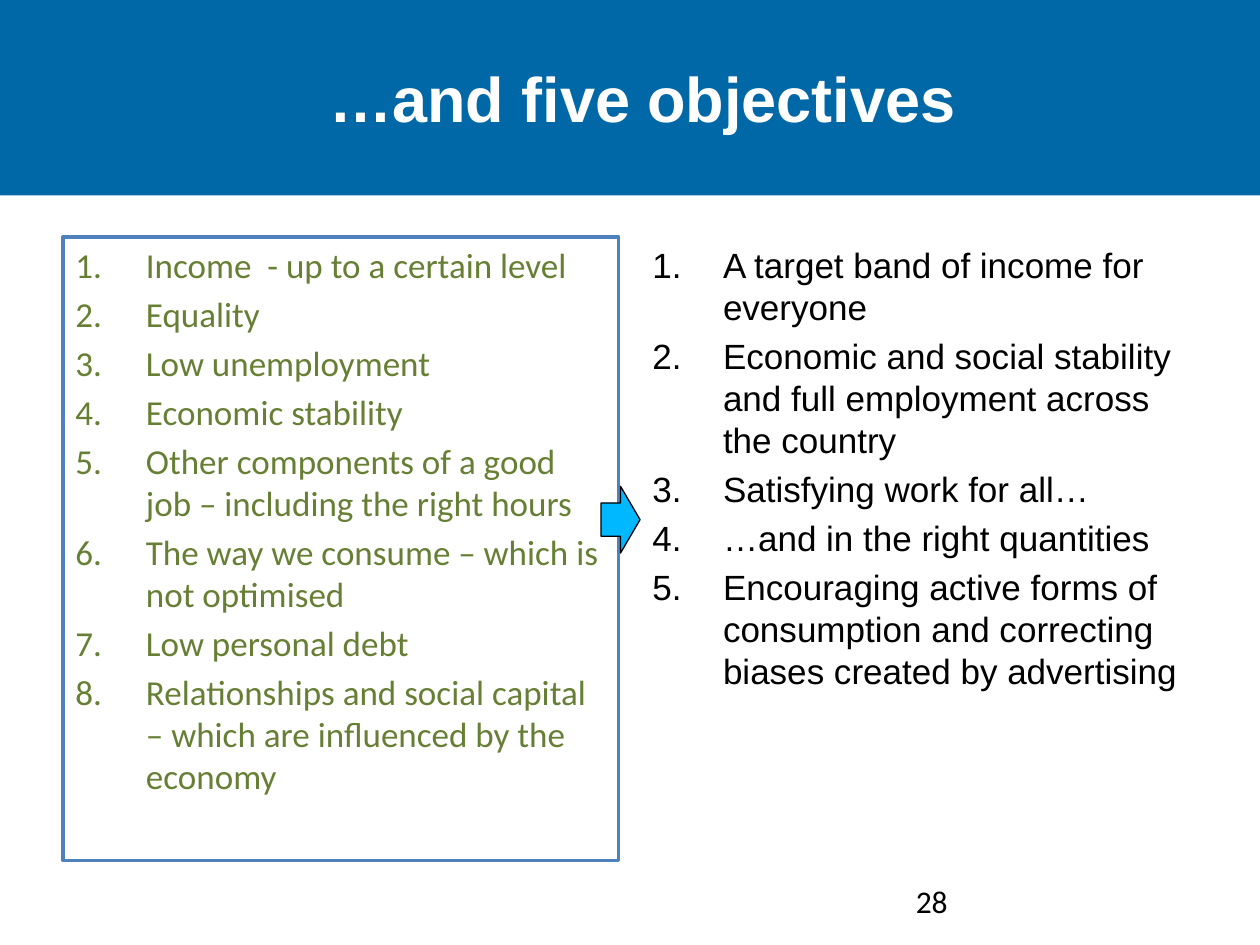
from lxml.etree import SubElement
from pptx import Presentation
from pptx.dml.color import RGBColor
from pptx.enum.shapes import MSO_SHAPE
from pptx.enum.text import MSO_ANCHOR, PP_ALIGN
from pptx.oxml.ns import qn
from pptx.util import Emu, Pt

EMU_PER_PX = 9144
COLORS = {
    "band": "0068A6",
    "white": "FFFFFF",
    "black": "000000",
    "frame": "4F81BD",
    "factor": "677F34",
    "arrow": "00B8FF",
}
FACTORS = [
    "Income  - up to a certain level",
    "Equality",
    "Low unemployment",
    "Economic stability",
    "Other components of a good job – including the right hours",
    "The way we consume – which is not optimised",
    "Low personal debt",
    "Relationships and social capital – which are influenced by the economy",
]
OBJECTIVES = [
    "A target band of income for everyone",
    "Economic and social stability and full employment across the country",
    "Satisfying work for all…",
    "…and in the right quantities",
    "Encouraging active forms of consumption and correcting biases created by advertising",
]


def px(length):
    return Emu(length * EMU_PER_PX)


def color(name):
    return RGBColor.from_string(COLORS[name])


def add_run(paragraph, text, size, font, ink, bold=False):
    run = paragraph.add_run()
    run.text = text
    run.font.size = Pt(size)
    run.font.name = font
    run.font.bold = bold
    run.font.color.rgb = color(ink)


def paint(shape, fill, line, width):
    shape.fill.solid()
    shape.fill.fore_color.rgb = color(fill)
    shape.line.color.rgb = color(line)
    shape.line.width = Pt(width)


def number(paragraph, indent):
    properties = paragraph._p.get_or_add_pPr()
    properties.set("marL", str(px(indent)))
    properties.set("indent", str(px(-indent)))
    SubElement(properties, qn("a:buFont"), typeface="+mj-lt")
    SubElement(properties, qn("a:buAutoNum"), type="arabicPeriod")


def title_band(slide, box):
    heading = slide.shapes.title
    heading.left, heading.top, heading.width, heading.height = map(px, box)
    heading.fill.solid()
    heading.fill.fore_color.rgb = color("band")
    heading.text_frame.vertical_anchor = MSO_ANCHOR.MIDDLE
    paragraph = heading.text_frame.paragraphs[0]
    paragraph.alignment = PP_ALIGN.CENTER
    add_run(paragraph, "…and five objectives", 36, "Arial", "white", bold=True)


def numbered_list(slide, box, items, font, ink):
    column = slide.shapes.add_textbox(*map(px, box))
    frame = column.text_frame
    frame.word_wrap = True
    for index, item in enumerate(items):
        paragraph = frame.add_paragraph() if index else frame.paragraphs[0]
        paragraph.space_before = Pt(4)
        paragraph.line_spacing = Pt(24)
        number(paragraph, 56)
        add_run(paragraph, item, 20, font, ink)
    return column


def page_number(slide, box):
    footer = slide.shapes.add_textbox(*map(px, box))
    footer.text_frame.word_wrap = True
    add_run(footer.text_frame.paragraphs[0], "28", 18, "Calibri", "black")


def link_arrow(slide, box):
    arrow = slide.shapes.add_shape(MSO_SHAPE.RIGHT_ARROW, *map(px, box))
    arrow.shadow.inherit = False
    paint(arrow, "arrow", "black", 0.75)


def main():
    presentation = Presentation()
    presentation.slide_width, presentation.slide_height = px(1000), px(750)
    slide = presentation.slides.add_slide(presentation.slide_layouts[5])
    title_band(slide, (0, 0, 1020, 155))
    factors = numbered_list(slide, (50, 188, 441, 495), FACTORS, "Calibri", "factor")
    paint(factors, "white", "frame", 2)
    numbered_list(slide, (508, 188, 442, 495), OBJECTIVES, "Arial", "black")
    page_number(slide, (717, 695, 233, 40))
    link_arrow(slide, (477, 386, 31, 53))
    presentation.save("out.pptx")


if __name__ == "__main__":
    main()
